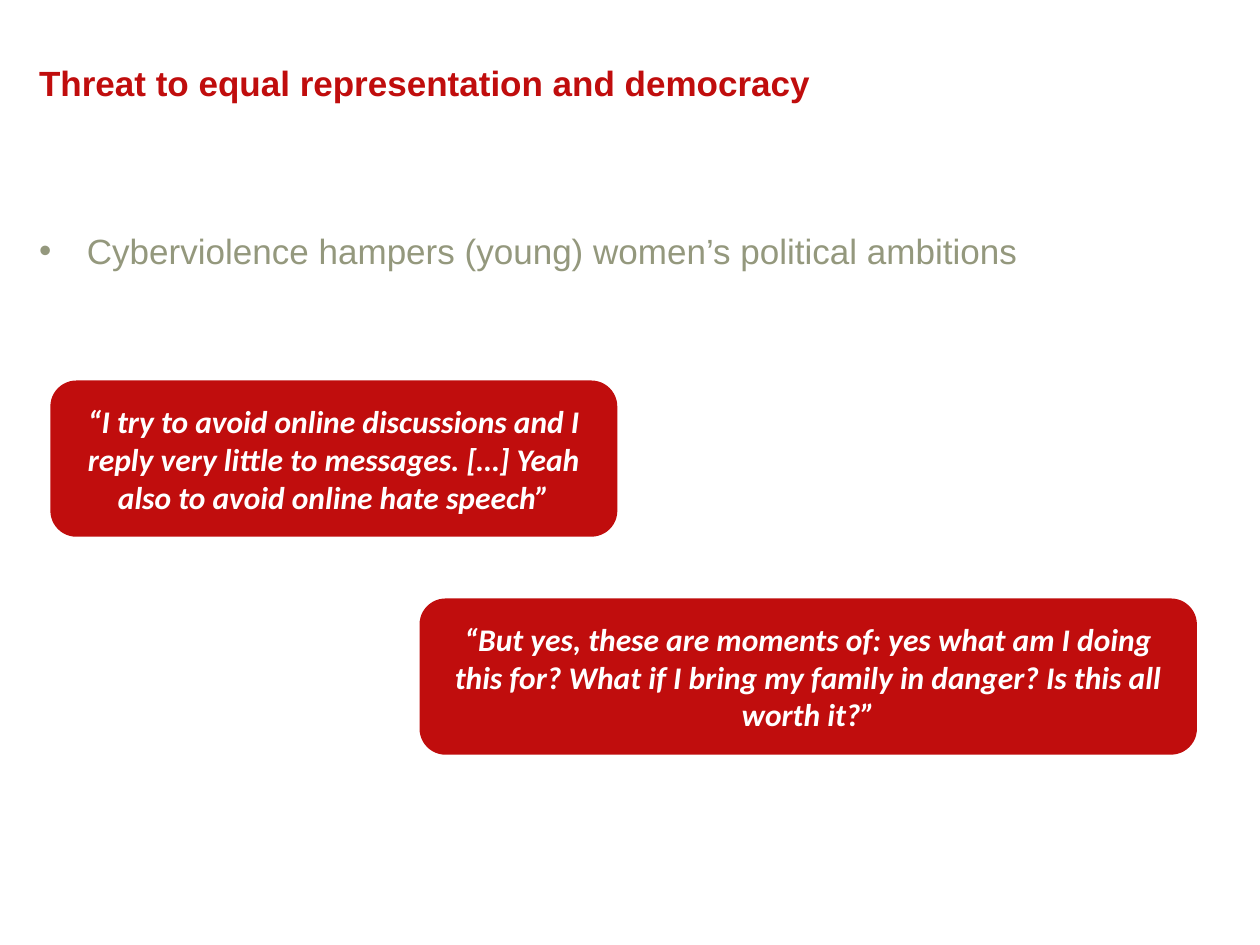
"""Build the slide on cyberviolence as a threat to equal representation."""
from lxml import etree
from pptx import Presentation
from pptx.dml.color import RGBColor
from pptx.enum import shapes, text
from pptx.oxml.ns import qn
from pptx.util import Inches, Pt

TITLE = "Threat to equal representation and democracy"
POINTS = ["Cyberviolence hampers (young) women’s political ambitions"]
QUOTES = [
    ("“But yes, these are moments of: yes what am I doing this for? "
     "What if I bring my family in danger? Is this all worth it?”", 3.33, 4.75, 6.17),
    ("“I try to avoid online discussions and I reply very little to messages. "
     "[…] Yeah also to avoid online hate speech”", 0.4, 3.02, 4.5),
]
QUOTE_HEIGHT = 1.24
LEFT, WIDTH = 0.31, 9.19
INDENT = 0.38
THEME = {
    "red": RGBColor.from_string("C00D0D"),
    "grey": RGBColor.from_string("94987D"),
    "white": RGBColor.from_string("FFFFFF"),
    "heading_font": "Arial",
    "quote_font": "Calibri",
    "heading_size": 20,
    "quote_size": 18,
}


def place(part, left, top, width, height):
    part.left, part.top, part.width, part.height = map(Inches, (left, top, width, height))


def prepare_frame(placeholder, top_inset=0):
    frame = placeholder.text_frame
    frame.margin_left = frame.margin_right = frame.margin_bottom = 0
    frame.margin_top = Inches(top_inset)
    frame.vertical_anchor = text.MSO_ANCHOR.TOP
    frame.auto_size = text.MSO_AUTO_SIZE.NONE
    frame.word_wrap = True
    return frame


def add_run(paragraph, words, font, size, color, bold=False, italic=False):
    run = paragraph.add_run()
    run.text = words
    run.font.name, run.font.size = font, Pt(size)
    run.font.bold, run.font.italic = bold, italic
    run.font.color.rgb = color


def add_bullet(paragraph, color):
    properties = paragraph._p.get_or_add_pPr()
    properties.set("marL", str(Inches(INDENT)))
    properties.set("indent", str(-Inches(INDENT)))
    bullet_color = etree.SubElement(properties, qn("a:buClr"))
    etree.SubElement(bullet_color, qn("a:srgbClr"), val=str(color))
    etree.SubElement(properties, qn("a:buFont"), typeface=THEME["heading_font"])
    etree.SubElement(properties, qn("a:buChar"), char="•")


def add_title(slide):
    title = slide.shapes.title
    place(title, LEFT, 0.39, WIDTH, 0.72)
    paragraph = prepare_frame(title).paragraphs[0]
    paragraph.alignment = text.PP_ALIGN.LEFT
    paragraph.line_spacing = 1.3
    add_run(paragraph, TITLE, THEME["heading_font"], THEME["heading_size"],
            THEME["red"], bold=True)


def add_points(slide):
    body = slide.placeholders[1]
    place(body, LEFT, 1.27, WIDTH, 5.17)
    frame = prepare_frame(body, top_inset=0.35)
    for index, point in enumerate(POINTS):
        paragraph = frame.add_paragraph() if index else frame.paragraphs[0]
        add_bullet(paragraph, THEME["grey"])
        paragraph.line_spacing = 1.6
        paragraph.space_before = Pt(0)
        add_run(paragraph, point, THEME["heading_font"], THEME["heading_size"], THEME["grey"])


def add_quote(slide, words, left, top, width):
    quote = slide.shapes.add_shape(
        shapes.MSO_SHAPE.ROUNDED_RECTANGLE,
        *map(Inches, (left, top, width, QUOTE_HEIGHT)))
    quote.shadow.inherit = False
    quote.fill.solid()
    quote.fill.fore_color.rgb = THEME["red"]
    quote.line.fill.background()
    frame = quote.text_frame
    frame.word_wrap = True
    frame.vertical_anchor = text.MSO_ANCHOR.MIDDLE
    paragraph = frame.paragraphs[0]
    paragraph.alignment = text.PP_ALIGN.CENTER
    add_run(paragraph, words, THEME["quote_font"], THEME["quote_size"],
            THEME["white"], bold=True, italic=True)


def main():
    deck = Presentation()
    deck.slide_width, deck.slide_height = Inches(10), Inches(7.5)
    slide = deck.slides.add_slide(deck.slide_layouts[1])
    add_title(slide)
    add_points(slide)
    for quote in QUOTES:
        add_quote(slide, *quote)
    deck.save("out.pptx")


if __name__ == "__main__":
    main()
